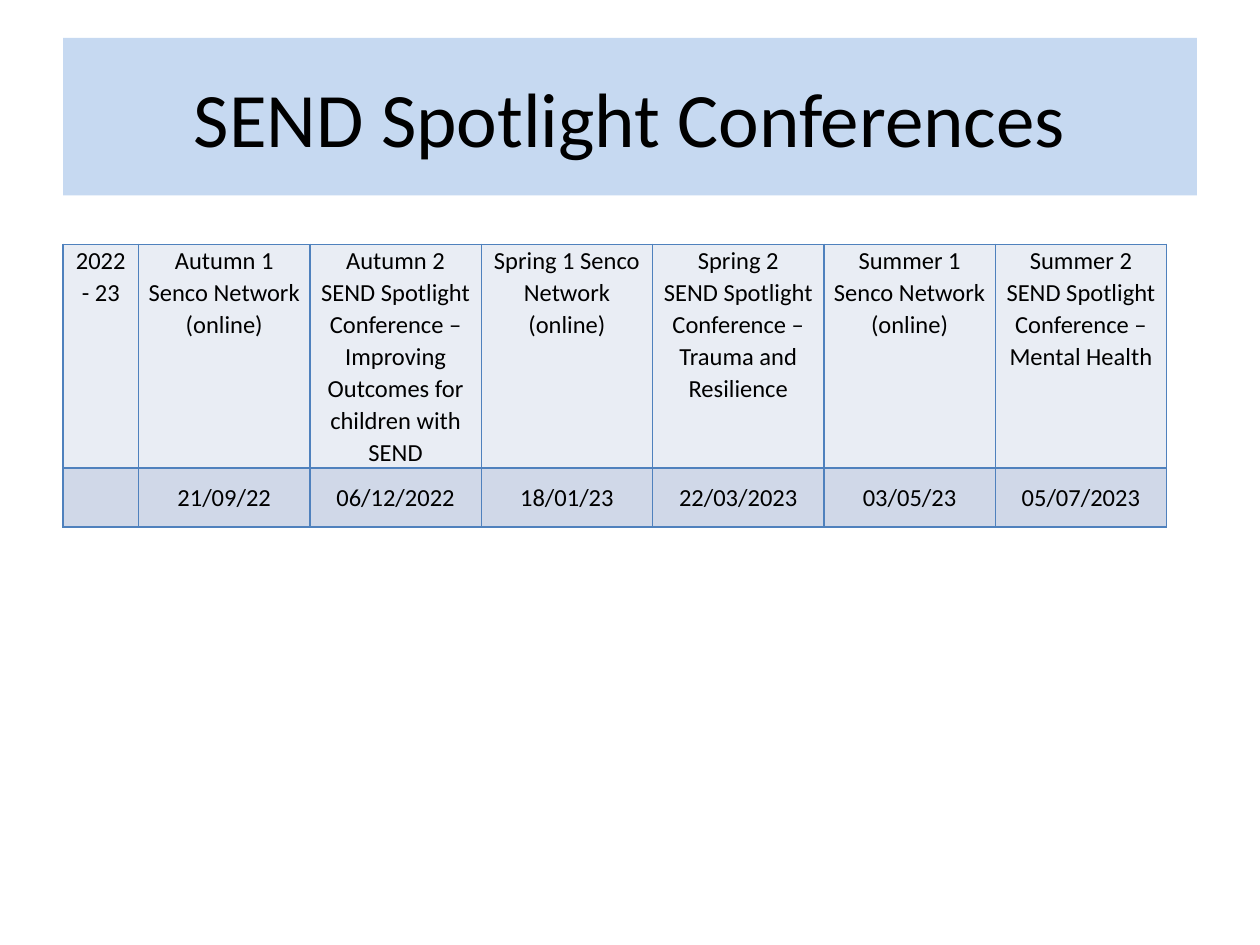
from dataclasses import dataclass

from lxml.etree import SubElement
from pptx import Presentation
from pptx.dml.color import RGBColor
from pptx.enum.text import MSO_ANCHOR, PP_ALIGN
from pptx.oxml.ns import qn
from pptx.util import Inches, Pt


@dataclass(frozen=True)
class Theme:
    face: str = "Calibri"
    ink: str = "000000"
    band: str = "C6D9F1"
    rows: tuple = ("E9EDF4", "D0D8E8")
    edge: str = "4F81BD"
    title: int = 44
    body: int = 14


class Deck:
    def __init__(self, theme):
        self.theme = theme
        self.prs = Presentation()
        self.prs.slide_width = Inches(10)
        self.prs.slide_height = Inches(7.5)
        self.slide = self.prs.slides.add_slide(self.prs.slide_layouts[5])

    def paint(self, item, color):
        item.fill.solid()
        item.fill.fore_color.rgb = RGBColor.from_string(color)

    def label(self, frame, text, size, spacing=None):
        frame.text = text
        frame.word_wrap = True
        for para in frame.paragraphs:
            para.alignment = PP_ALIGN.CENTER
            para.line_spacing = spacing
            para.font.name = self.theme.face
            para.font.size = Pt(size)
            para.font.color.rgb = RGBColor.from_string(self.theme.ink)

    def title(self, text, left, top, width, height):
        box = self.slide.shapes.title
        box.left, box.top = Inches(left), Inches(top)
        box.width, box.height = Inches(width), Inches(height)
        self.paint(box, self.theme.band)
        self.label(box.text_frame, text, self.theme.title)
        box.text_frame.vertical_anchor = MSO_ANCHOR.MIDDLE

    def border(self, cell):
        props = cell._tc.get_or_add_tcPr()
        # Borders must come before the cell's fill
        for spot, side in enumerate(("lnL", "lnR", "lnT", "lnB")):
            line = SubElement(props, qn(f"a:{side}"), w=str(Pt(1)))
            fill = SubElement(line, qn("a:solidFill"))
            SubElement(fill, qn("a:srgbClr"), val=self.theme.edge)
            props.insert(spot, line)

    def cell(self, cell, text, color, anchor):
        self.paint(cell, color)
        self.border(cell)
        cell.margin_left = cell.margin_right = Inches(0.07)
        cell.margin_top = cell.margin_bottom = 0
        cell.vertical_anchor = anchor
        self.label(cell.text_frame, text, self.theme.body, 1.07)

    def table(self, data, left, top, widths, heights):
        frame = self.slide.shapes.add_table(
            len(data), len(widths), Inches(left), Inches(top),
            Inches(sum(widths)), Inches(sum(heights)))
        grid = frame.table
        for col, width in zip(grid.columns, widths):
            col.width = Inches(width)
        anchors = (MSO_ANCHOR.TOP, MSO_ANCHOR.MIDDLE)
        for row, height, texts, color, anchor in zip(
                grid.rows, heights, data, self.theme.rows, anchors):
            row.height = Inches(height)
            for cell, text in zip(row.cells, texts):
                self.cell(cell, text, color, anchor)


# Events by half term, then their dates
EVENTS = [
    ("2022 - 23", ""),
    ("Autumn 1 Senco Network (online)", "21/09/22"),
    ("Autumn 2\nSEND Spotlight Conference – Improving Outcomes "
     "for children with SEND", "06/12/2022"),
    ("Spring 1 Senco Network\n(online)", "18/01/23"),
    ("Spring 2\nSEND Spotlight Conference – Trauma and Resilience",
     "22/03/2023"),
    ("Summer 1 Senco Network\n(online)", "03/05/23"),
    ("Summer 2\nSEND Spotlight Conference – Mental Health", "05/07/2023"),
]


def main():
    deck = Deck(Theme())
    # Title band
    deck.title("SEND Spotlight Conferences", 0.5, 0.3, 9, 1.25)
    # Conference calendar
    deck.table(list(zip(*EVENTS)), 0.5, 1.94,
               [0.6] + [1.36] * 6, [1.38, 0.47])
    deck.prs.save("out.pptx")


if __name__ == "__main__":
    main()
